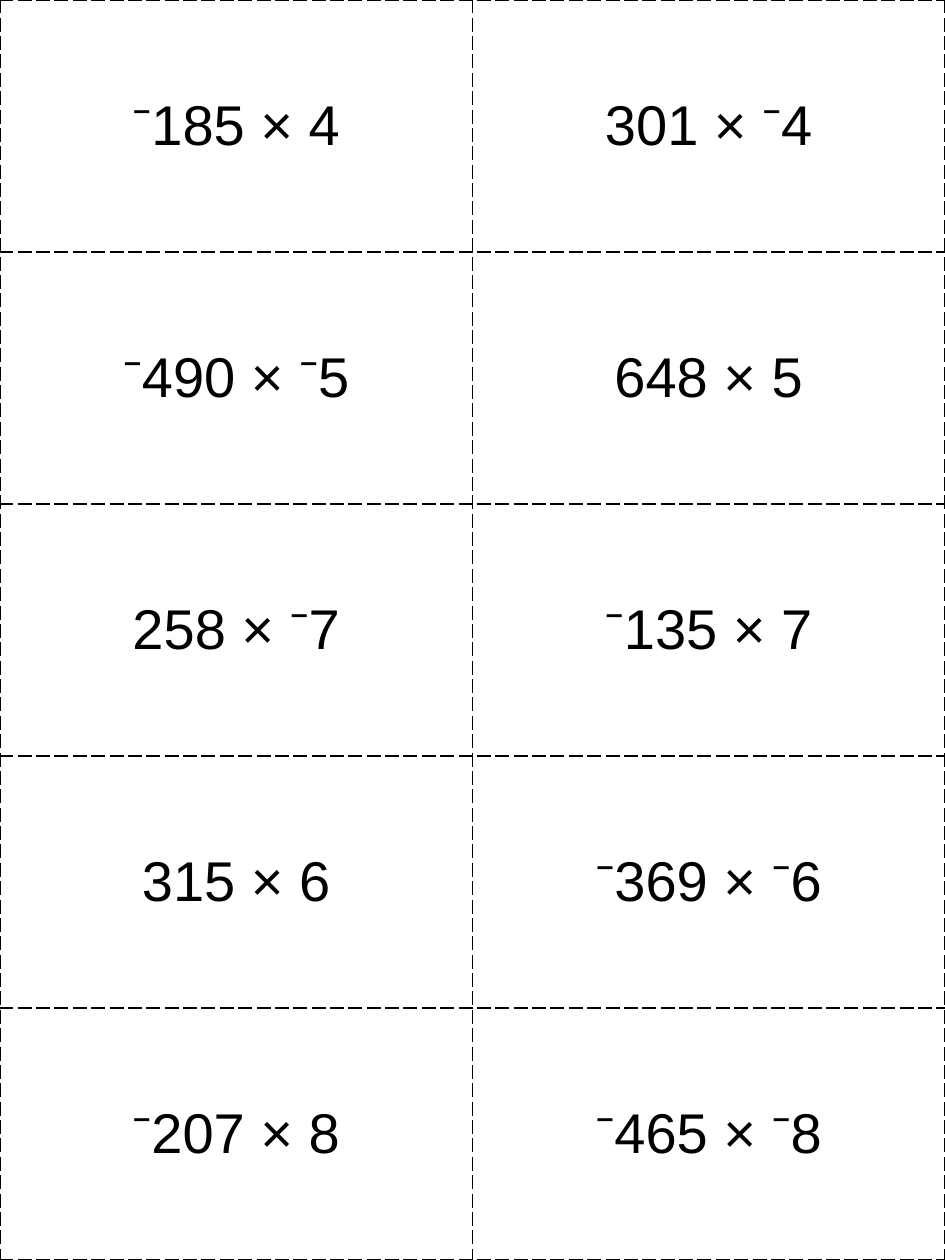
from lxml import etree
from pptx import Presentation
from pptx import util as u
from pptx.dml.color import RGBColor
from pptx.enum import text
from pptx.oxml import ns

CARDS = [
    ("⁻185 × 4", "301 × ⁻4"),
    ("⁻490 × ⁻5", "648 × 5"),
    ("258 × ⁻7", "⁻135 × 7"),
    ("315 × 6", "⁻369 × ⁻6"),
    ("⁻207 × 8", "⁻465 × ⁻8"),
]
THEME = {"font": "Arial", "size": 32, "ink": "000000", "rule": 1, "dash": "lgDash"}
WIDTH, HEIGHT = u.Inches(7.5), u.Inches(10)


def add_cuts(cell):
    """Draw a dashed cutting line on all four sides of the cell."""
    props = cell._tc.get_or_add_tcPr()
    for side in ("lnL", "lnR", "lnT", "lnB"):
        line = etree.SubElement(props, ns.qn(f"a:{side}"), w=str(u.Pt(THEME["rule"])))
        fill = etree.SubElement(line, ns.qn("a:solidFill"))
        etree.SubElement(fill, ns.qn("a:srgbClr"), val=THEME["ink"])
        etree.SubElement(line, ns.qn("a:prstDash"), val=THEME["dash"])


def fill_card(cell, sum_text):
    add_cuts(cell)
    cell.fill.background()
    cell.vertical_anchor = text.MSO_ANCHOR.MIDDLE
    cell.text_frame.text = sum_text
    para = cell.text_frame.paragraphs[0]
    para.alignment = text.PP_ALIGN.CENTER
    font = para.runs[0].font
    font.name, font.size, font.bold = THEME["font"], u.Pt(THEME["size"]), False
    font.color.rgb = RGBColor.from_string(THEME["ink"])


def main():
    deck = Presentation()
    deck.slide_width, deck.slide_height = WIDTH, HEIGHT
    slide = deck.slides.add_slide(deck.slide_layouts[6])
    grid = slide.shapes.add_table(len(CARDS), len(CARDS[0]), 0, 0, WIDTH, HEIGHT).table
    grid.first_row = grid.horz_banding = False
    for r, row in enumerate(CARDS):
        for c, sum_text in enumerate(row):
            fill_card(grid.cell(r, c), sum_text)
    deck.save("out.pptx")


if __name__ == "__main__":
    main()
